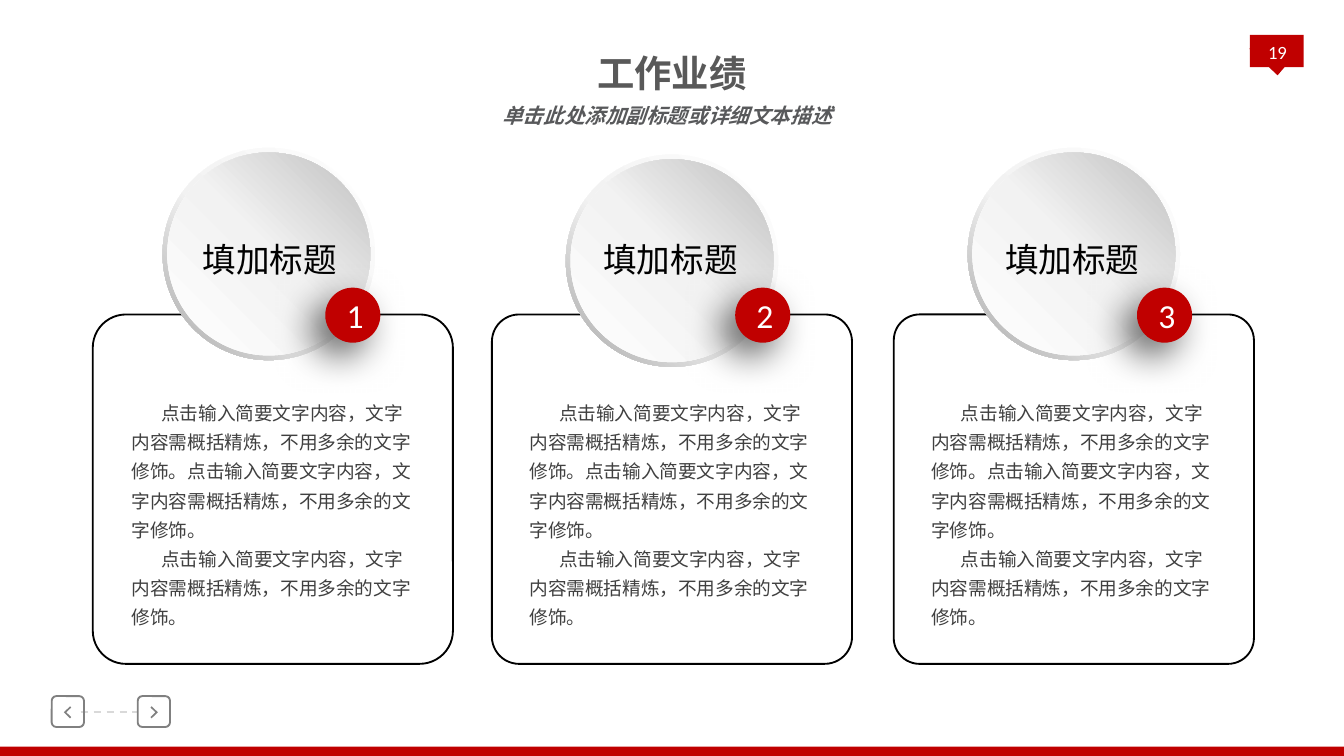
from dataclasses import dataclass

from lxml import etree
from pptx import Presentation
from pptx.dml.color import RGBColor
from pptx.enum.dml import MSO_LINE
from pptx.enum.shapes import MSO_CONNECTOR, MSO_SHAPE
from pptx.enum.text import MSO_ANCHOR, MSO_AUTO_SIZE, PP_ALIGN
from pptx.oxml import parse_xml
from pptx.oxml.ns import nsdecls, qn
from pptx.util import Inches, Pt

RECTANGLE, TRIANGLE = MSO_SHAPE.RECTANGLE, MSO_SHAPE.ISOSCELES_TRIANGLE
ROUNDED, DONUT, OVAL = MSO_SHAPE.ROUNDED_RECTANGLE, MSO_SHAPE.DONUT, MSO_SHAPE.OVAL
LEFT, CENTER = PP_ALIGN.LEFT, PP_ALIGN.CENTER
TOP, MIDDLE = MSO_ANCHOR.TOP, MSO_ANCHOR.MIDDLE
TITLE_ONLY = 5
COLUMNS, ROWS = 100, 56.25
CELL = 0.1  # inches per column and per row

SENTENCE = "点击输入简要文字内容，文字内容需概括精炼，不用多余的文字修饰。"


@dataclass(frozen=True)
class Theme:
    latin: str = "Calibri"
    chinese: str = "Noto Sans CJK SC"
    red: str = "C00000"
    white: str = "FFFFFF"
    black: str = "000000"
    title: str = "595959"
    subtitle: str = "58595B"
    body: str = "404040"
    button: str = "808080"
    dash: str = "D9D9D9"
    rim: tuple = ((0, "FFFFFF"), (55, "F2F2F2"), (100, "A6A6A6"))
    disc: tuple = ((0, "FFFFFF"), (51, "F2F2F2"), (100, "BFBFBF"))
    title_size: int = 20
    heading_size: int = 18
    subtitle_size: int = 11
    body_size: int = 10


@dataclass(frozen=True)
class Card:
    left: float
    corner: float
    disc_left: float
    disc_top: float
    badge_left: float
    heading_left: float
    body_left: float


CARDS = (
    Card(6.9, 0.095, 12.1, 11, 24.2, 14.1, 9.8),
    Card(36.6, 0.078, 42.1, 11.5, 54.7, 43.9, 39.4),
    Card(66.5, 0.074, 72, 11, 84.6, 73.8, 69.3),
)


def cells(count):
    return Inches(count * CELL)


def write_text(frame, text, *, size, color, font, align=LEFT, anchor=TOP, bold=False,
               italic=False, wrap=True, insets=None, spacing=None, indent=0, grow=False):
    """Fill a text frame, one paragraph for each line of text; insets are in cells."""
    frame.word_wrap = wrap
    frame.vertical_anchor = anchor
    frame.auto_size = MSO_AUTO_SIZE.SHAPE_TO_FIT_TEXT if grow else MSO_AUTO_SIZE.NONE
    if insets is not None:
        frame.margin_left, frame.margin_top, frame.margin_right, frame.margin_bottom = map(cells, insets)
    for index, line in enumerate(text.split("\n")):
        paragraph = frame.add_paragraph() if index else frame.paragraphs[0]
        paragraph.alignment = align
        if spacing:
            paragraph.line_spacing = spacing
        if indent:
            paragraph._p.get_or_add_pPr().set("indent", str(cells(indent)))
        run = paragraph.add_run()
        run.text = line
        run.font.size, run.font.bold, run.font.italic = Pt(size), bold, italic
        run.font.color.rgb = RGBColor.from_string(color)
        run.font.name = font
        etree.SubElement(run._r.get_or_add_rPr(), qn("a:ea")).set("typeface", font)


class SlideBuilder:
    """Draws on one slide; every length is in grid columns and rows."""

    def __init__(self, slide, theme):
        self.slide, self.theme = slide, theme

    def paint(self, shape, fill=None, line=None, width=1):
        shape.shadow.inherit = False
        if fill:
            shape.fill.solid()
            shape.fill.fore_color.rgb = RGBColor.from_string(fill)
        else:
            shape.fill.background()
        if line:
            shape.line.color.rgb = RGBColor.from_string(line)
            shape.line.width = Pt(width)
        else:
            shape.line.fill.background()
        return shape

    def shape(self, kind, left, top, width, height, *, adjust=None, **paint):
        shape = self.slide.shapes.add_shape(kind, *map(cells, (left, top, width, height)))
        if adjust is not None:
            shape.adjustments[0] = adjust
        return self.paint(shape, **paint)

    def gradient_shape(self, kind, left, top, size, stops, angle, adjust=None):
        shape = self.shape(kind, left, top, size, size, adjust=adjust)
        stop_xml = "".join(
            f'<a:gs pos="{position * 1000}"><a:srgbClr val="{color}"/></a:gs>'
            for position, color in stops)
        properties = shape._element.spPr
        properties.replace(properties.find(qn("a:noFill")), parse_xml(
            f'<a:gradFill {nsdecls("a")} rotWithShape="1"><a:gsLst>{stop_xml}</a:gsLst>'
            f'<a:lin ang="{angle * 60000}" scaled="0"/></a:gradFill>'))

    def text(self, text, left, top, width, height, **style):
        box = self.slide.shapes.add_textbox(*map(cells, (left, top, width, height)))
        write_text(box.text_frame, text, **style)

    def title(self, text, left, top, width, height, **style):
        title = self.slide.shapes.title
        title.left, title.top, title.width, title.height = map(cells, (left, top, width, height))
        write_text(title.text_frame, text, **style)

    def dashed_line(self, left, right, row):
        line = self.slide.shapes.add_connector(
            MSO_CONNECTOR.STRAIGHT, *map(cells, (left, row, right, row)))
        line.line.color.rgb = RGBColor.from_string(self.theme.dash)
        line.line.width, line.line.dash_style = Pt(1), MSO_LINE.DASH
        etree.SubElement(line._element.spPr, qn("a:effectLst"))

    def arrow_button(self, left, direction):
        """Draw a framed chevron; direction is -1 for back and 1 for forward."""
        gray, middle, row = self.theme.button, left + 1.2, 53
        self.shape(ROUNDED, left, row - 1.2, 2.4, 2.3, adjust=0.15, line=gray)
        outline = ((-0.25, -0.35), (0.12, 0), (-0.25, 0.35), (-0.17, 0.45), (0.3, 0), (-0.17, -0.45))
        points = [(cells(middle + direction * x), cells(row + y)) for x, y in outline]
        builder = self.slide.shapes.build_freeform(*points[0])
        builder.add_line_segments(points[1:])
        self.paint(builder.convert_to_shape(), fill=gray)

    def badge(self, number, left, top):
        theme = self.theme
        badge = self.shape(OVAL, left, top, 4.1, 4.1, fill=theme.red)
        badge._element.spPr.find(qn("a:effectLst")).append(parse_xml(
            f'<a:outerShdw {nsdecls("a")} blurRad="{Pt(20)}" dist="{Pt(10)}" dir="8100000">'
            f'<a:srgbClr val="{theme.black}"><a:alpha val="60000"/></a:srgbClr></a:outerShdw>'))
        write_text(badge.text_frame, str(number), size=theme.heading_size, color=theme.white,
                   font=theme.latin, align=CENTER, anchor=MIDDLE)

    def card(self, number, card):
        theme = self.theme
        self.shape(ROUNDED, card.left, 23.4, 26.8, 26, adjust=card.corner, line=theme.black)
        self.gradient_shape(DONUT, card.disc_left, card.disc_top, 15.8, theme.rim, 135, 0.049)
        self.gradient_shape(OVAL, card.disc_left + 0.35, card.disc_top + 0.35, 15.1, theme.disc, 315)
        self.badge(number, card.badge_left, 21.4)
        self.text("填加标题", card.heading_left, 17.3, 12.1, 4, size=theme.heading_size,
                  color=theme.black, font=theme.chinese, wrap=False, grow=True)
        self.text(f"{SENTENCE * 2}\n{SENTENCE}", card.body_left, 29.4, 21.3, 17.5,
                  size=theme.body_size, color=theme.body, font=theme.chinese,
                  insets=(0, 0, 0, 0), spacing=1.3, indent=2.2, grow=True)

    def page_tag(self, number):
        theme = self.theme
        self.shape(RECTANGLE, 93, 2.6, 4, 2.4, fill=theme.red)
        self.shape(TRIANGLE, 93, 3.5, 4, 2.1, fill=theme.red).rotation = 176.8
        self.text(str(number), 93.2, 2.2, 3.7, 3.8, size=theme.body_size, color=theme.white,
                  font=theme.latin, align=CENTER, anchor=MIDDLE, insets=(0, 0, 0, 0.5))


def main():
    presentation = Presentation()
    presentation.slide_width, presentation.slide_height = cells(COLUMNS), cells(ROWS)
    theme = Theme()
    slide = presentation.slides.add_slide(presentation.slide_layouts[TITLE_ONLY])
    builder = SlideBuilder(slide, theme)

    builder.shape(RECTANGLE, 0, ROWS - 0.7, COLUMNS, 0.7, fill=theme.red)
    builder.page_tag(19)
    builder.dashed_line(6, 10.2, 53)
    builder.arrow_button(3.85, -1)
    builder.arrow_button(10.25, 1)
    for number, card in enumerate(CARDS, start=1):
        builder.card(number, card)
    builder.title("工作业绩", 39, 3.7, 22, 3.4, size=theme.title_size, color=theme.title,
                  font=theme.chinese, align=CENTER, bold=True, insets=(0, 0, 0, 0), grow=True)
    builder.text("单击此处添加副标题或详细文本描述", 36.3, 7.2, 26.7, 2.9, size=theme.subtitle_size,
                 color=theme.subtitle, font=theme.chinese, align=CENTER, bold=True, italic=True,
                 wrap=False, grow=True)
    presentation.save("out.pptx")


if __name__ == "__main__":
    main()
